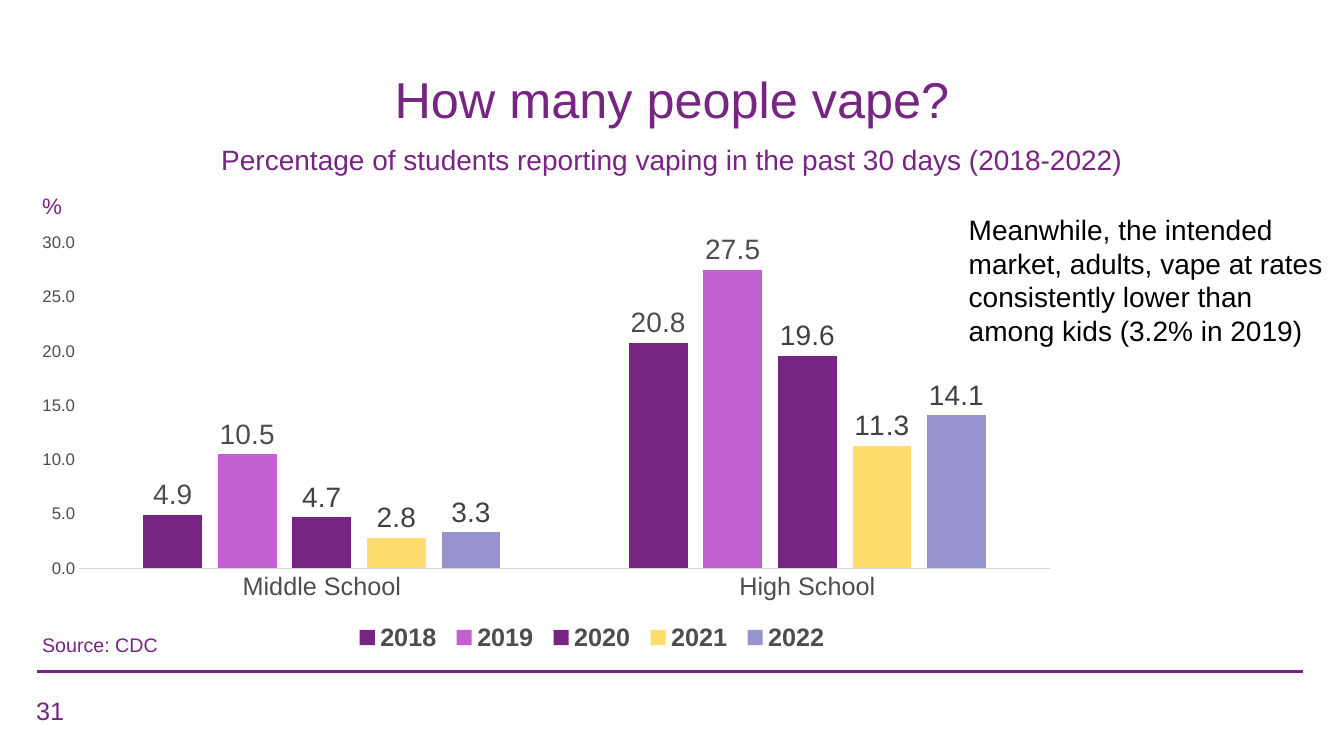
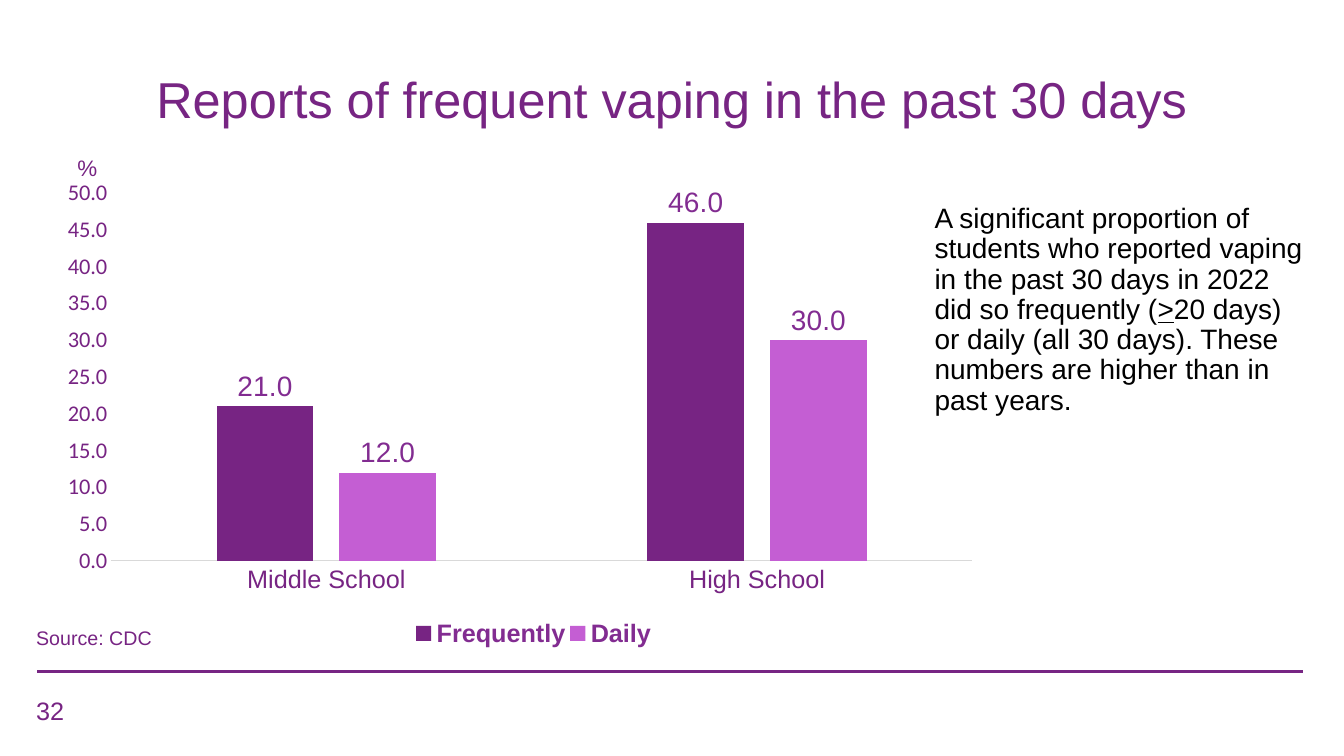
from pptx import Presentation
from pptx.chart.data import CategoryChartData
from pptx.dml.color import RGBColor
from pptx.enum.chart import (
    XL_CHART_TYPE as ChartType,
    XL_LABEL_POSITION as LabelPosition,
    XL_LEGEND_POSITION as LegendPosition,
    XL_TICK_MARK as TickMark,
)
from pptx.enum.shapes import MSO_CONNECTOR as Connector
from pptx.enum.text import MSO_ANCHOR as Anchor, PP_ALIGN as Align
from pptx.oxml import parse_xml
from pptx.oxml.ns import nsdecls, qn
from pptx.util import Emu, Pt

PX = 9144  # 100 px to the inch
COLORS = {
    "title": "772583",
    "purple": "772483",
    "violet": "822C91",
    "orchid": "C45ED3",
    "yellow": "FFDC6C",
    "lavender": "9793CF",
    "gray": "4D4D4F",
    "dark": "404040",
    "axis": "D9D9D9",
    "black": "000000",
}
FONT = "Arial"
SCHOOLS = ["Middle School", "High School"]


def px(*lengths):
    return [Emu(length * PX) for length in lengths]


def rgb(name):
    return RGBColor.from_string(COLORS[name])


def style(font, size, color, name=FONT, bold=False):
    font.name = name
    font.size = Pt(size)
    font.bold = bold
    font.color.rgb = rgb(color)


def add_text(page, place, spans, size, color="purple", align=Align.LEFT,
             anchor=Anchor.TOP, wrap=True, line_spacing=1.0):
    """Add one paragraph; spans are (text, underlined) pairs or a string."""
    box = page.shapes.add_textbox(*px(*place))
    frame = box.text_frame
    frame.word_wrap = wrap
    frame.vertical_anchor = anchor
    para = frame.paragraphs[0]
    para.alignment = align
    para.line_spacing = line_spacing
    if isinstance(spans, str):
        spans = [(spans, False)]
    for text, underlined in spans:
        span = para.add_run()
        span.text = text
        style(span.font, size, color)
        span.font.underline = underlined


def add_page(deck, title, number):
    page = deck.slides.add_slide(deck.slide_layouts[6])
    # Footer rule
    rule = page.shapes.add_connector(Connector.STRAIGHT, *px(37, 666, 1292, 666))
    rule.line.color.rgb = rgb("title")
    rule.line.width = Pt(2.25)
    rule._element.spPr.append(parse_xml(f"<a:effectLst {nsdecls('a')}/>"))
    # Title and page number
    add_text(page, (60, 0, 1213, 133), title, 36, "title", Align.CENTER,
             Anchor.BOTTOM, line_spacing=0.9)
    add_text(page, (26, 685, 300, 40), str(number), 18)
    return page


def add_source(page, left, top):
    add_text(page, (left, top, 136, 34), "Source: CDC", 14, wrap=False)


def add_unit(page, left, top):
    add_text(page, (left, top, 35, 37), "%", 16, wrap=False)


def set_layout(parent, index, area, inner=False):
    """Fix the place of a chart part as fractions of the chart."""
    for old in parent.findall(qn("c:layout")):
        parent.remove(old)
    target = '<c:layoutTarget val="inner"/>' if inner else ""
    modes = "".join(f'<c:{side}Mode val="edge"/>' for side in "xy")
    sizes = "".join(f'<c:{side} val="{value}"/>' for side, value in zip("xywh", area))
    parent.insert(index, parse_xml(
        f"<c:layout {nsdecls('c')}><c:manualLayout>{target}{modes}{sizes}"
        "</c:manualLayout></c:layout>"))


def add_columns(page, place, series, maximum, plot_area, legend_area,
                category_color, value_font, legend_color):
    """Add a column chart; series are (name, values, fill, label colour)."""
    data = CategoryChartData(number_format="0.0")
    data.categories = SCHOOLS
    for name, values, _, _ in series:
        data.add_series(name, values)
    chart = page.shapes.add_chart(
        ChartType.COLUMN_CLUSTERED, *px(*place), data).chart
    style(chart.font, 10, "black")
    chart.has_title = False

    # Axes
    categories, values = chart.category_axis, chart.value_axis
    for axis in (categories, values):
        axis.major_tick_mark = axis.minor_tick_mark = TickMark.NONE
        axis.has_major_gridlines = False
    style(categories.tick_labels.font, 18, category_color)
    categories.format.line.color.rgb = rgb("axis")
    categories.format.line.width = Pt(0.75)
    size, color, name = value_font
    style(values.tick_labels.font, size, color, name)
    values.tick_labels.number_format = "0.0"
    values.tick_labels.number_format_is_linked = False
    values.format.line.fill.background()
    values.minimum_scale, values.maximum_scale, values.major_unit = 0, maximum, 5

    # Columns and their labels
    plot = chart.plots[0]
    plot.gap_width, plot.overlap, plot.vary_by_categories = 219, -27, False
    for column, (_, _, fill, label_color) in zip(plot.series, series):
        column.format.fill.solid()
        column.format.fill.fore_color.rgb = rgb(fill)
        labels = column.data_labels
        labels.show_value = True
        labels.position = LabelPosition.OUTSIDE_END
        labels.number_format = "0.0"
        labels.number_format_is_linked = False
        style(labels.font, 20, label_color)

    # Legend and plot area
    chart.has_legend = True
    legend = chart.legend
    legend.position = LegendPosition.BOTTOM
    legend.include_in_layout = False
    style(legend.font, 18, legend_color, bold=True)
    set_layout(legend._element, 1, legend_area)
    set_layout(chart._chartSpace.xpath("c:chart/c:plotArea")[0], 0, plot_area, True)


def build_prevalence(deck):
    page = add_page(deck, "How many people vape?", 31)
    add_source(page, 32, 623)
    add_text(page, (172, 136, 989, 44),
             "Percentage of students reporting vaping in the past 30 days (2018-2022)",
             20, align=Align.CENTER)
    add_columns(
        page, (32, 227, 1010, 429),
        [("2018", (4.9, 20.8), "purple", "gray"),
         ("2019", (10.5, 27.5), "orchid", "gray"),
         ("2020", (4.7, 19.6), "purple", "dark"),
         ("2021", (2.8, 11.3), "yellow", "dark"),
         ("2022", (3.3, 14.1), "lavender", "dark")],
        30, (0.046, 0.033, 0.954, 0.752), (0.31, 0.9, 0.48, 0.09),
        "gray", (12, "gray", FONT), "gray")
    add_text(page, (951, 206, 373, 145),
             "Meanwhile, the intended market, adults, vape at rates "
             "consistently lower than among kids (3.2% in 2019)", 20, "black")
    add_unit(page, 32, 186)


def build_frequency(deck):
    page = add_page(deck, "Reports of frequent vaping in the past 30 days", 32)
    add_columns(
        page, (67, 133, 898, 516),
        [("Frequently", (21, 46), "purple", "violet"),
         ("Daily", (12, 30), "orchid", "violet")],
        50, (0.048, 0.114, 0.952, 0.707), (0.38, 0.925, 0.27, 0.07),
        "purple", (16, "purple", "Calibri"), "violet")
    add_text(page, (917, 198, 389, 226),
             [("A significant proportion of students who reported vaping in the "
               "past 30 days in 2022 did so frequently (", False),
              (">", True),
              ("20 days) or daily (all 30 days). These numbers are higher than "
               "in past years.", False)],
             20, "black", line_spacing=0.9)
    add_source(page, 26, 616)
    add_unit(page, 67, 148)


def main():
    deck = Presentation()
    deck.slide_width, deck.slide_height = px(1333, 750)
    build_prevalence(deck)
    build_frequency(deck)
    deck.save("out.pptx")


if __name__ == "__main__":
    main()
